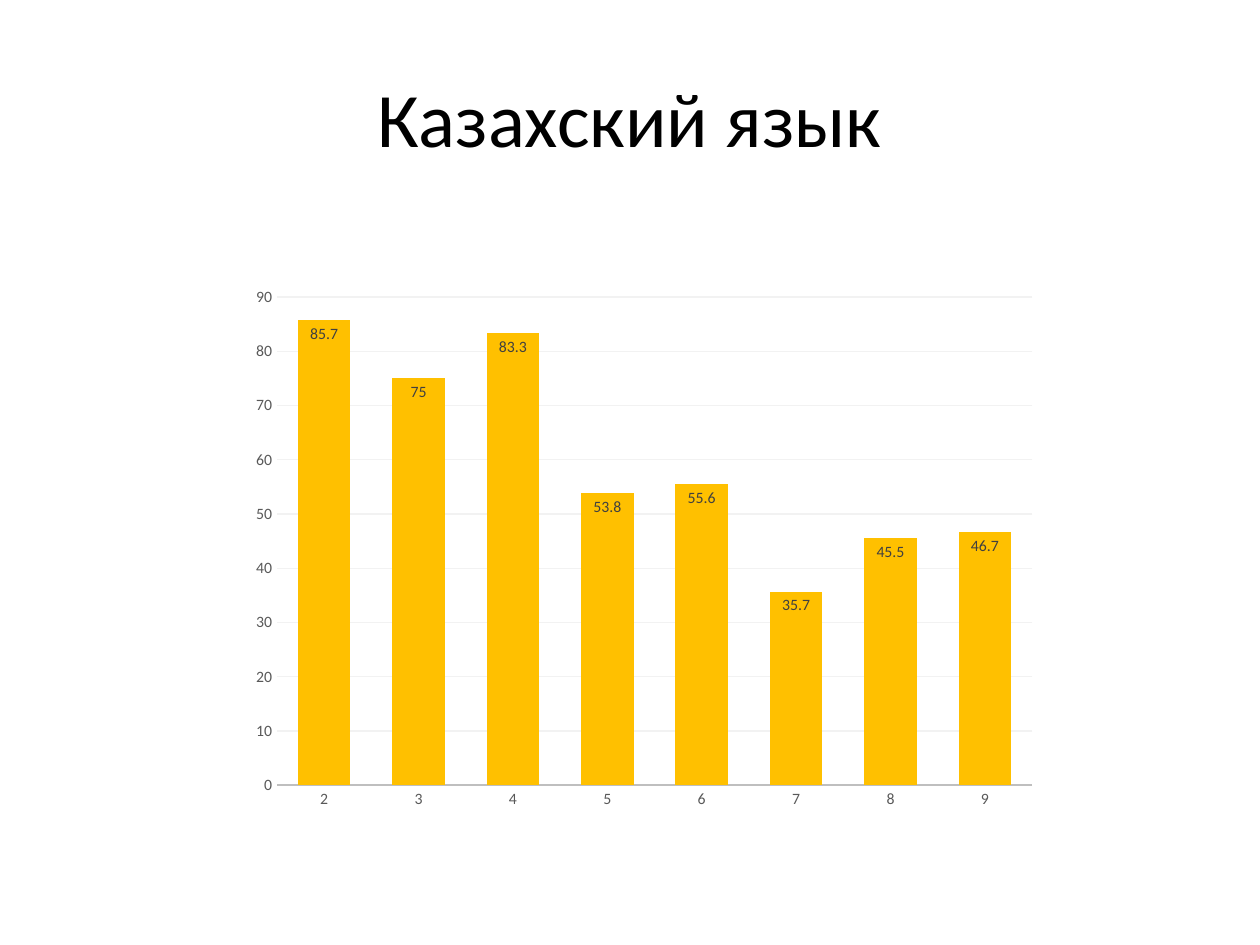
from lxml import etree
from pptx import Presentation
from pptx.chart.data import CategoryChartData
from pptx.dml.color import RGBColor
from pptx.enum.chart import XL_CHART_TYPE, XL_LABEL_POSITION, XL_TICK_MARK
from pptx.enum.text import MSO_ANCHOR, PP_ALIGN
from pptx.oxml.ns import qn
from pptx.util import Inches, Pt

STACKED = XL_CHART_TYPE.COLUMN_STACKED
INSIDE_END = XL_LABEL_POSITION.INSIDE_END
NO_TICK = XL_TICK_MARK.NONE
MIDDLE = MSO_ANCHOR.MIDDLE
CENTER = PP_ALIGN.CENTER

FONT = "Calibri"
SCORES = {"2": 85.7, "3": 75, "4": 83.3, "5": 53.8,
          "6": 55.6, "7": 35.7, "8": 45.5, "9": 46.7}
PLOT_LAYOUT = {"layoutTarget": "inner", "xMode": "edge", "yMode": "edge",
               "x": 0.256, "y": 0.145, "w": 0.738, "h": 0.783}


def color(hex_value: str) -> RGBColor:
    return RGBColor.from_string(hex_value)


def style_font(font, size: float, hex_value: str) -> None:
    for name, value in {"name": FONT, "size": Pt(size), "bold": False}.items():
        setattr(font, name, value)
    font.color.rgb = color(hex_value)


def style_line(line, hex_value: str, width: float) -> None:
    line.color.rgb = color(hex_value)
    line.width = Pt(width)


def place_plot(chart) -> None:
    """Fix the inner plot area as fractions of the chart frame."""
    plot_area = chart.plots[0]._element.getparent()
    for old_layout in plot_area.findall(qn("c:layout")):
        plot_area.remove(old_layout)
    layout = etree.Element(qn("c:layout"))
    manual = etree.SubElement(layout, qn("c:manualLayout"))
    for name, value in PLOT_LAYOUT.items():
        etree.SubElement(manual, qn(f"c:{name}"), val=str(value))
    plot_area.insert(0, layout)


def add_title(slide, text: str) -> None:
    box = slide.shapes.add_textbox(Inches(0.5), Inches(0.3), Inches(9), Inches(1.25))
    frame = box.text_frame
    frame.word_wrap = True
    frame.vertical_anchor = MIDDLE
    paragraph = frame.paragraphs[0]
    paragraph.text = text
    paragraph.alignment = CENTER
    style_font(paragraph.font, 44, "000000")


def add_score_chart(slide) -> None:
    data = CategoryChartData()
    data.categories = list(SCORES)
    data.add_series("Series 1", list(SCORES.values()))
    chart = slide.shapes.add_chart(
        STACKED, Inches(0.12), Inches(1.64), Inches(8.12), Inches(4.95), data
    ).chart
    chart.has_legend = False
    chart.has_title = False
    style_font(chart.font, 10, "000000")
    place_plot(chart)

    plot = chart.plots[0]
    plot_format = {"gap_width": 80, "overlap": 100,
                   "vary_by_categories": False, "has_data_labels": True}
    for name, value in plot_format.items():
        setattr(plot, name, value)
    fill = plot.series[0].format.fill
    fill.solid()
    fill.fore_color.rgb = color("FFC000")
    labels = plot.data_labels
    labels.show_value = True
    labels.position = INSIDE_END
    style_font(labels.font, 9, "404040")

    category_axis, value_axis = chart.category_axis, chart.value_axis
    for axis in (category_axis, value_axis):
        axis.major_tick_mark = NO_TICK
        axis.minor_tick_mark = NO_TICK
        style_font(axis.tick_labels.font, 9, "595959")
    category_axis.has_major_gridlines = False
    style_line(category_axis.format.line, "BFBFBF", 1.25)
    value_axis.format.line.fill.background()
    value_scale = {"minimum_scale": 0, "maximum_scale": 90, "major_unit": 10,
                   "has_major_gridlines": True}
    for name, value in value_scale.items():
        setattr(value_axis, name, value)
    style_line(value_axis.major_gridlines.format.line, "F2F2F2", 0.75)


def main() -> None:
    presentation = Presentation()
    presentation.slide_width = Inches(10)
    presentation.slide_height = Inches(7.5)
    slide = presentation.slides.add_slide(presentation.slide_layouts[6])
    add_title(slide, "Казахский язык")
    add_score_chart(slide)
    presentation.save("out.pptx")


if __name__ == "__main__":
    main()
